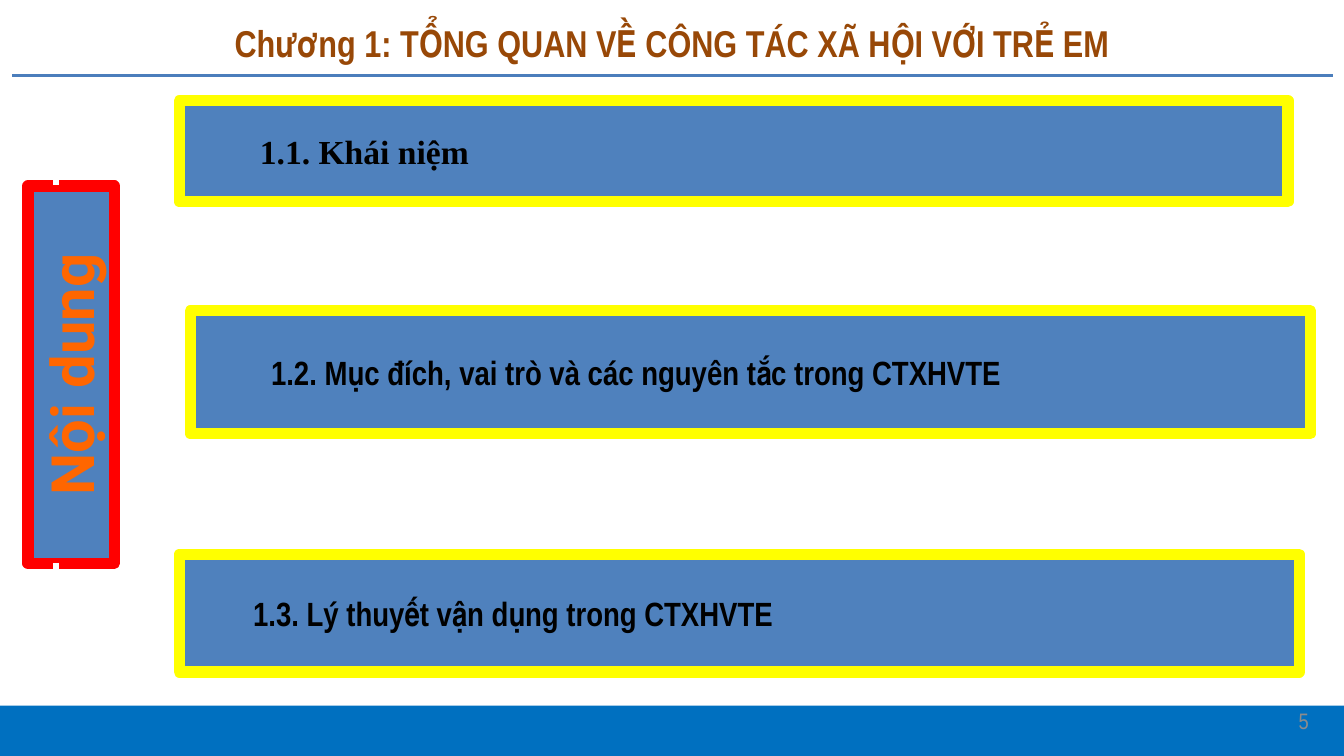
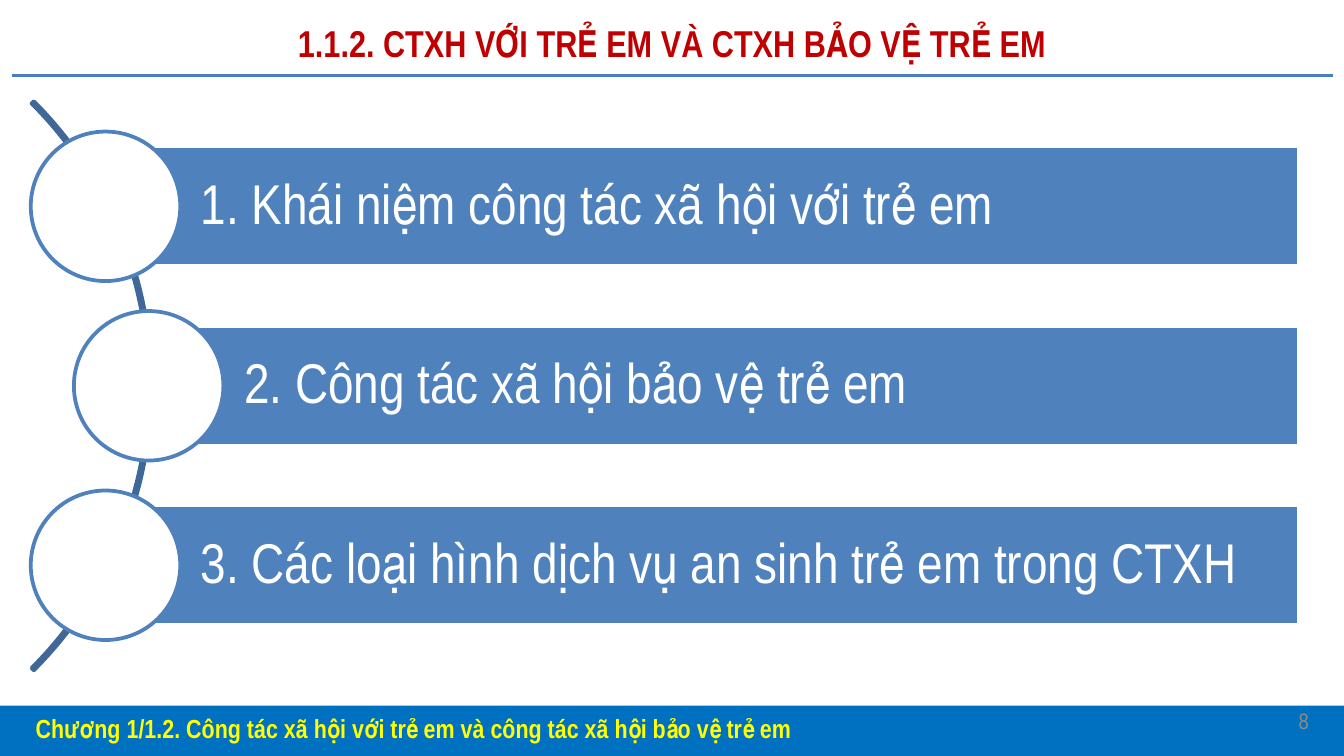
from pptx import Presentation
from pptx.dml.color import RGBColor
from pptx.enum.shapes import MSO_CONNECTOR, MSO_SHAPE
from pptx.enum.text import MSO_ANCHOR, MSO_AUTO_SIZE, PP_ALIGN
from pptx.oxml.ns import qn
from pptx.util import Inches, Pt
from lxml.etree import SubElement

WHITE = RGBColor(0xFF, 0xFF, 0xFF)
BLACK = RGBColor(0x00, 0x00, 0x00)
GRAY = RGBColor(0x8C, 0x8C, 0x8C)
BLUE = RGBColor(0x4F, 0x81, 0xBD)
RULE = RGBColor(0x4B, 0x7E, 0xBC)
NAVY = RGBColor(0x3F, 0x67, 0x97)
BAND = RGBColor(0x00, 0x70, 0xC0)
YELLOW = RGBColor(0xFF, 0xFF, 0x00)
RED = RGBColor(0xFF, 0x00, 0x00)
ORANGE = RGBColor(0xFF, 0x66, 0x00)
BROWN = RGBColor(0x98, 0x48, 0x07)
CRIMSON = RGBColor(0xC0, 0x00, 0x00)

NARROW = "Arial Narrow"
COLS, ROWS = 240, 135
CELL = Inches(10) / COLS


def grid(*cells):
    """Turn grid cells into slide lengths."""
    return [round(cell * CELL) for cell in cells]


def write(shape, text, size, color, bold=False, font=NARROW,
          align=PP_ALIGN.LEFT, anchor=MSO_ANCHOR.MIDDLE, inset=None):
    """Put one styled paragraph in a shape."""
    frame = shape.text_frame
    frame.text = text
    frame.word_wrap = True
    frame.vertical_anchor = anchor
    if inset is not None:
        frame.margin_left = Inches(inset)
    para = frame.paragraphs[0]
    para.alignment = align
    face = para.runs[0].font
    face.name, face.size, face.bold = font, Pt(size), bold
    face.color.rgb = color
    return para


def label(slide, box, *args, **style):
    """Add a text box with one paragraph."""
    return write(slide.shapes.add_textbox(*grid(*box)), *args, **style)


def block(slide, kind, box, fill=None, line=None, width=2):
    """Add a flat preset shape."""
    shape = slide.shapes.add_shape(kind, *grid(*box))
    shape.shadow.inherit = False
    if fill is None:
        shape.fill.background()
    else:
        shape.fill.solid()
        shape.fill.fore_color.rgb = fill
    if line is None:
        shape.line.fill.background()
    else:
        shape.line.color.rgb = line
        shape.line.width = Pt(width)
    return shape


def stroke(slide, ends, color, width, arrow=False):
    """Add a straight line, with an arrowhead if asked."""
    line = slide.shapes.add_connector(MSO_CONNECTOR.STRAIGHT, *grid(*ends))
    line.line.color.rgb = color
    line.line.width = Pt(width)
    props = line._element.spPr
    if arrow:
        SubElement(props.find(qn("a:ln")), qn("a:tailEnd"), type="triangle")
    SubElement(props, qn("a:effectLst"))


def base(deck, title, color, number):
    """Start a slide with its band, rule, title and number."""
    slide = deck.slides.add_slide(deck.slide_layouts[6])
    block(slide, MSO_SHAPE.RECTANGLE, (-1, 126, COLS + 2, 9), BAND)
    stroke(slide, (2.2, 13.5, 238, 13.5), RULE, 2)
    label(slide, (4, 1.5, 232, 12.2), title, 20, color, True,
          align=PP_ALIGN.CENTER)
    label(slide, (214.5, 125, 21.6, 7.2), number, 12, GRAY,
          align=PP_ALIGN.RIGHT)
    return slide


def spine(slide, box, text):
    """Add the upright heading that fills a tall box."""
    left, top, width, height = box
    turned = (left + (width - height) / 2, top + (height - width) / 2,
              height, width)
    shape = block(slide, MSO_SHAPE.RECTANGLE, turned, BLUE, RED, 6)
    shape.rotation = 270
    write(shape, text, 32, ORANGE, True, "Roboto", PP_ALIGN.CENTER,
          MSO_ANCHOR.TOP)
    shape.text_frame.auto_size = MSO_AUTO_SIZE.SHAPE_TO_FIT_TEXT


def topic(slide, box, text, font, inset):
    """Add one framed topic."""
    shape = block(slide, MSO_SHAPE.RECTANGLE, box, BLUE, YELLOW, 6)
    write(shape, text, 18, BLACK, True, font, inset=inset)


def outline(deck):
    """Build the chapter outline."""
    slide = base(deck, "Chương 1: TỔNG QUAN VỀ CÔNG TÁC XÃ HỘI VỚI TRẺ EM",
                 BROWN, "5")
    spine(slide, (5, 33.2, 15.4, 67.4), "Nội dung")
    for start, end in ((21, 33), (100.5, 111)):
        stroke(slide, (10, start, 10, end), WHITE, 3)
    for left, row, right in ((10, 21, 32), (22, 64.5, 34), (10, 111, 32)):
        stroke(slide, (left, row, right, row), WHITE, 3, True)
    topics = (
        ((32, 18, 198, 18), "1.1. Khái niệm", "Times New Roman", 0.6),
        ((34, 55.5, 200, 22),
         "1.2. Mục đích, vai trò và các nguyên tắc trong CTXHVTE", NARROW, 0.6),
        ((32, 99, 200, 21), "1.3. Lý thuyết vận dụng trong CTXHVTE",
         NARROW, 0.55),
    )
    for item in topics:
        topic(slide, *item)


def curve(slide, box, items):
    """Add bars with discs along an arc inside a box."""
    left, top, width, height = box
    disc, bar, bulge, ring = 26.7, 21.4, 7.7, 143.7
    pitch = (height - disc) / (len(items) - 1)
    arc = block(slide, MSO_SHAPE.BLOCK_ARC,
                (left + 21.6 - ring, top + (height - ring) / 2, ring, ring),
                line=NAVY)
    for spot, value in enumerate((189, 27, 0.004)):
        arc.adjustments[spot] = value
    for row, text in enumerate(items):
        edge = left + bulge * (row % 2)
        start = edge + disc / 2
        head = top + row * pitch
        shape = block(slide, MSO_SHAPE.RECTANGLE,
                      (start, head + (disc - bar) / 2,
                       left + width - start, bar), BLUE, WHITE)
        para = write(shape, text, 30, WHITE, inset=0.71)
        para.line_spacing = 0.9
        block(slide, MSO_SHAPE.OVAL, (edge, head, disc, disc), WHITE, BLUE)


def section(deck):
    """Build the section list."""
    slide = base(deck, "1.1.2. CTXH VỚI TRẺ EM VÀ CTXH BẢO VỆ TRẺ EM",
                 CRIMSON, "8")
    curve(slide, (5.5, 23.5, 226.5, 90.8), (
        "1. Khái niệm công tác xã hội với trẻ em",
        "2. Công tác xã hội bảo vệ trẻ em",
        "3. Các loại hình dịch vụ an sinh trẻ em trong CTXH",
    ))
    label(slide, (4, 126, 229.5, 7.7),
          "Chương 1/1.2. Công tác xã hội với trẻ em và công tác xã hội "
          "bảo vệ trẻ em", 14, YELLOW, True, align=PP_ALIGN.JUSTIFY,
          anchor=MSO_ANCHOR.TOP)


def main():
    """Build and save the deck."""
    deck = Presentation()
    deck.slide_width, deck.slide_height = grid(COLS, ROWS)
    outline(deck)
    section(deck)
    deck.save("out.pptx")


if __name__ == "__main__":
    main()
